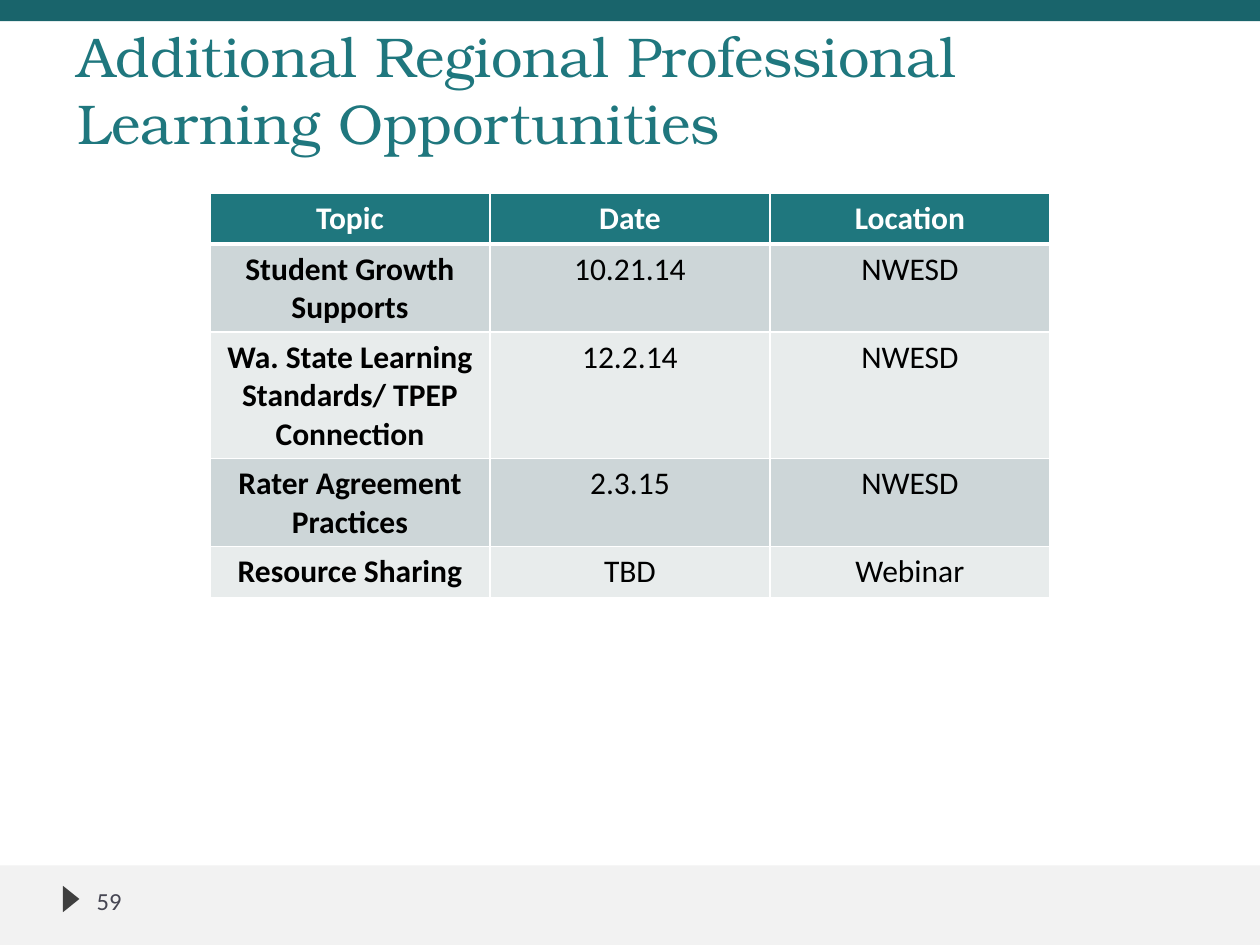
from dataclasses import dataclass

from lxml.etree import SubElement
from pptx import Presentation
from pptx.dml.color import RGBColor
from pptx.enum.shapes import MSO_SHAPE as Preset
from pptx.enum.text import MSO_ANCHOR as Anchor, PP_ALIGN as Align
from pptx.oxml.ns import qn
from pptx.util import Pt

TEAL, WHITE, BLACK = "1F777E", "FFFFFF", "000000"
BODY_FILLS = ("CDD6D8", "E8ECEC")
ROWS = (
    ("Topic", "Date", "Location"),
    ("Student Growth Supports", "10.21.14", "NWESD"),
    ("Wa. State Learning Standards/ TPEP Connection", "12.2.14", "NWESD"),
    ("Rater Agreement Practices", "2.3.15", "NWESD"),
    ("Resource Sharing", "TBD", "Webinar"),
)
COLUMN_WIDTH, ROW_HEIGHT = 160, 29.2


@dataclass
class Decoration:
    preset: Preset
    box: tuple
    fill: str
    rotation: float = 0


@dataclass
class Label:
    text: str
    box: tuple
    anchor: Anchor
    font: dict


DECORATIONS = (
    Decoration(Preset.RECTANGLE, (0, 494.6, 720, 45.4), "F2F2F2"),
    Decoration(Preset.RECTANGLE, (0, 0, 720, 12.2), "19646B"),
    Decoration(Preset.ISOSCELES_TRIANGLE, (33.1, 509, 15.1, 9.4), "3F3F3F", 90),
)
LABELS = (
    Label("59", (48.2, 500.4, 156.2, 28.8), Anchor.MIDDLE,
          {"name": "Calibri", "size": Pt(14), "color": "464653"}),
    Label("Additional Regional Professional Learning Opportunities",
          (37.4, 12.2, 649.4, 80.6), Anchor.BOTTOM,
          {"name": "TeX Gyre Bonum", "size": Pt(32), "color": TEAL}),
)


def set_color(color_format, value: str) -> None:
    color_format.rgb = RGBColor.from_string(value)


def set_fill(fill, value: str) -> None:
    fill.solid()
    set_color(fill.fore_color, value)


def set_font(font, values: dict) -> None:
    for name, value in values.items():
        if name == "color":
            set_color(font.color, value)
        else:
            setattr(font, name, value)


def draw_decoration(slide, item: Decoration) -> None:
    shape = slide.shapes.add_shape(item.preset, *map(Pt, item.box))
    shape.rotation = item.rotation
    shape.shadow.inherit = False
    set_fill(shape.fill, item.fill)
    shape.line.fill.background()


def draw_label(slide, label: Label) -> None:
    frame = slide.shapes.add_textbox(*map(Pt, label.box)).text_frame
    frame.word_wrap = True
    frame.vertical_anchor = label.anchor
    run = frame.paragraphs[0].add_run()
    run.text = label.text
    set_font(run.font, label.font)


def set_borders(cell, widths: dict) -> None:
    properties = cell._tc.get_or_add_tcPr()
    for side, width in widths.items():
        line = SubElement(properties, qn(f"a:ln{side}"), w=str(Pt(width)))
        fill = SubElement(line, qn("a:solidFill"))
        SubElement(fill, qn("a:srgbClr"), val=WHITE)


def draw_table(slide, left: float, top: float) -> None:
    row_count, column_count = len(ROWS), len(ROWS[0])
    table = slide.shapes.add_table(
        row_count, column_count, Pt(left), Pt(top),
        Pt(COLUMN_WIDTH * column_count), Pt(ROW_HEIGHT * row_count)).table
    for column in table.columns:
        column.width = Pt(COLUMN_WIDTH)
    for row_index, texts in enumerate(ROWS):
        table.rows[row_index].height = Pt(ROW_HEIGHT)
        is_header = row_index == 0
        for column_index, text in enumerate(texts):
            cell = table.cell(row_index, column_index)
            # Borders go before the fill in the cell properties
            set_borders(cell, {"L": 1, "R": 1, "T": 3 if row_index == 1 else 1,
                               "B": 3 if is_header else 1})
            set_fill(cell.fill, TEAL if is_header else BODY_FILLS[(row_index - 1) % 2])
            paragraph = cell.text_frame.paragraphs[0]
            paragraph.alignment = Align.CENTER
            run = paragraph.add_run()
            run.text = text
            set_font(run.font, {"name": "Calibri", "size": Pt(18),
                                "bold": is_header or column_index == 0,
                                "color": WHITE if is_header else BLACK})


def main() -> None:
    presentation = Presentation()
    presentation.slide_width, presentation.slide_height = Pt(720), Pt(540)
    slide = presentation.slides.add_slide(presentation.slide_layouts[6])
    set_fill(slide.background.fill, WHITE)

    # Bands and page marker
    for item in DECORATIONS:
        draw_decoration(slide, item)
    # Page number and title
    for label in LABELS:
        draw_label(slide, label)
    # Schedule
    draw_table(slide, 120, 110.2)

    presentation.save("out.pptx")


if __name__ == "__main__":
    main()
